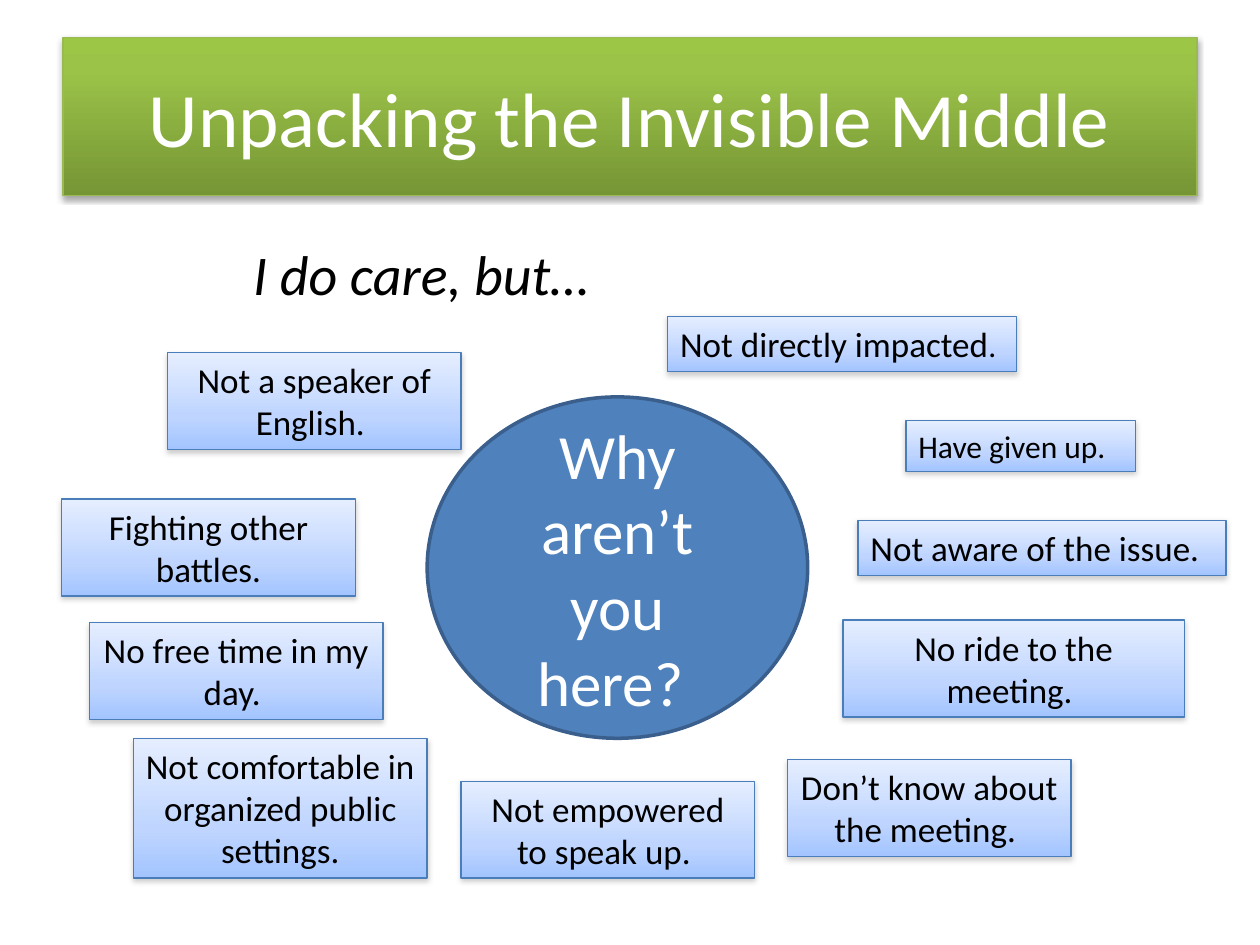
"""Build the slide on why people who care stay away from meetings."""
from lxml import etree
from pptx import Presentation, util as u
from pptx.dml.color import RGBColor
from pptx.enum import shapes, text
from pptx.oxml import ns

WHITE = RGBColor(0xFF, 0xFF, 0xFF)
BLACK = RGBColor(0, 0, 0)
BLUE = RGBColor(0x4F, 0x81, 0xBD)
DARK_BLUE = RGBColor(0x3A, 0x5F, 0x8C)
EDGE_BLUE = RGBColor(0x4A, 0x7E, 0xBB)
EDGE_GREEN = RGBColor(0x98, 0xB9, 0x54)
GREY = RGBColor(0x80, 0x80, 0x80)

GREEN_STOPS = [(0, "9CC746"), (20, "9BC348"), (100, "769535")]
BLUE_STOPS = [(0, "E5EEFF"), (65, "BFD5FF"), (100, "A3C4FF")]
GREEN_SHADOW = {"color": BLACK, "alpha": 35, "distance": 1.8}
BLUE_SHADOW = {"color": GREY, "alpha": 38, "distance": 1.6}

LEFT, CENTER = text.PP_ALIGN.LEFT, text.PP_ALIGN.CENTER
TOP, MIDDLE = text.MSO_ANCHOR.TOP, text.MSO_ANCHOR.MIDDLE

TITLE = "Unpacking the Invisible Middle"
QUESTION = "Why aren’t you here? "
LEAD_IN = "I do care, but…"
REASONS = [
    ([("Not directly impacted", 20), (".", 18)], (5.3, 2.51, 2.77, 0.44), LEFT, True),
    ([("Not aware of the issue.", 20)], (6.81, 4.13, 2.92, 0.44), LEFT, True),
    ([("Don’t know about the meeting. ", 20)], (6.25, 6.03, 2.25, 0.77), CENTER, True),
    ([("Not comfortable in organized public settings.", 20)], (1.06, 5.86, 2.33, 1.11), CENTER, True),
    ([("Not a speaker of English. ", 20)], (1.33, 2.8, 2.33, 0.77), CENTER, True),
    ([("Not empowered to speak up. ", 20)], (3.66, 6.2, 2.33, 0.77), CENTER, True),
    ([("No free time in my day. ", 20)], (0.71, 4.94, 2.33, 0.77), CENTER, True),
    ([("No ride to the meeting. ", 20)], (6.69, 4.92, 2.71, 0.77), CENTER, True),
    ([("Fighting other battles.", 20)], (0.49, 3.96, 2.33, 0.77), CENTER, True),
    ([("Have given up.", 18)], (7.19, 3.34, 1.82, 0.4), LEFT, False),
]


def add_child(parent, tag, **attributes):
    values = {name: str(value) for name, value in attributes.items()}
    return etree.SubElement(parent, ns.qn(tag), values)


def place(box, area):
    for name, value in zip(("left", "top", "width", "height"), area):
        setattr(box, name, u.Inches(value))


def outline(box, color, width):
    box.line.color.rgb = color
    box.line.width = u.Pt(width)


def write(box, runs, color, align, anchor, wrap=True, **font):
    frame = box.text_frame
    frame.word_wrap = wrap
    frame.vertical_anchor = anchor
    para = frame.paragraphs[0]
    para.alignment = align
    for words, size in runs:
        span = para.add_run()
        span.text = words
        span.font.color.rgb = color
        for name, value in {"name": "Calibri", "size": u.Pt(size), **font}.items():
            setattr(span.font, name, value)


def shade(box, stops, shadow):
    properties = box._element.spPr
    gradient = etree.Element(ns.qn("a:gradFill"), {"rotWithShape": "1"})
    stop_list = add_child(gradient, "a:gsLst")
    for position, color in stops:
        stop = add_child(stop_list, "a:gs", pos=position * 1000)
        add_child(stop, "a:srgbClr", val=color)
    add_child(gradient, "a:lin", ang=5400000, scaled=0)
    properties.find(ns.qn("a:ln")).addprevious(gradient)

    box.shadow.inherit = False
    outer = add_child(properties.find(ns.qn("a:effectLst")), "a:outerShdw",
                      blurRad=u.Pt(3.1), dist=u.Pt(shadow["distance"]),
                      dir=5400000, rotWithShape=0)
    tint = add_child(outer, "a:srgbClr", val=shadow["color"])
    add_child(tint, "a:alpha", val=shadow["alpha"] * 1000)


def add_reason(page, runs, area, align, wrap):
    box = page.shapes.add_shape(shapes.MSO_SHAPE.RECTANGLE, *map(u.Inches, area))
    outline(box, EDGE_BLUE, 0.75)
    shade(box, BLUE_STOPS, BLUE_SHADOW)
    write(box, runs, BLACK, align, TOP, wrap)


def add_question(page):
    oval = page.shapes.add_shape(shapes.MSO_SHAPE.OVAL, *map(u.Inches, (3.39, 3.15, 3.02, 2.71)))
    oval.shadow.inherit = False
    oval.fill.solid()
    oval.fill.fore_color.rgb = BLUE
    outline(oval, DARK_BLUE, 2)
    write(oval, [(QUESTION, 36)], WHITE, CENTER, MIDDLE)


def main():
    deck = Presentation()
    deck.slide_width, deck.slide_height = u.Inches(10), u.Inches(7.5)
    page = deck.slides.add_slide(deck.slide_layouts[5])

    title = page.shapes.title
    place(title, (0.5, 0.3, 9, 1.25))
    outline(title, EDGE_GREEN, 0.75)
    shade(title, GREEN_STOPS, GREEN_SHADOW)
    write(title, [(TITLE, 44)], WHITE, CENTER, MIDDLE)

    for reason in REASONS[:-1]:
        add_reason(page, *reason)
    add_question(page)
    add_reason(page, *REASONS[-1])

    lead_in = page.shapes.add_textbox(*map(u.Inches, (1.91, 1.85, 2.91, 0.64)))
    lead_in.fill.solid()
    lead_in.fill.fore_color.rgb = WHITE
    write(lead_in, [(LEAD_IN, 32)], BLACK, LEFT, TOP, wrap=False, italic=True)

    deck.save("out.pptx")


if __name__ == "__main__":
    main()
